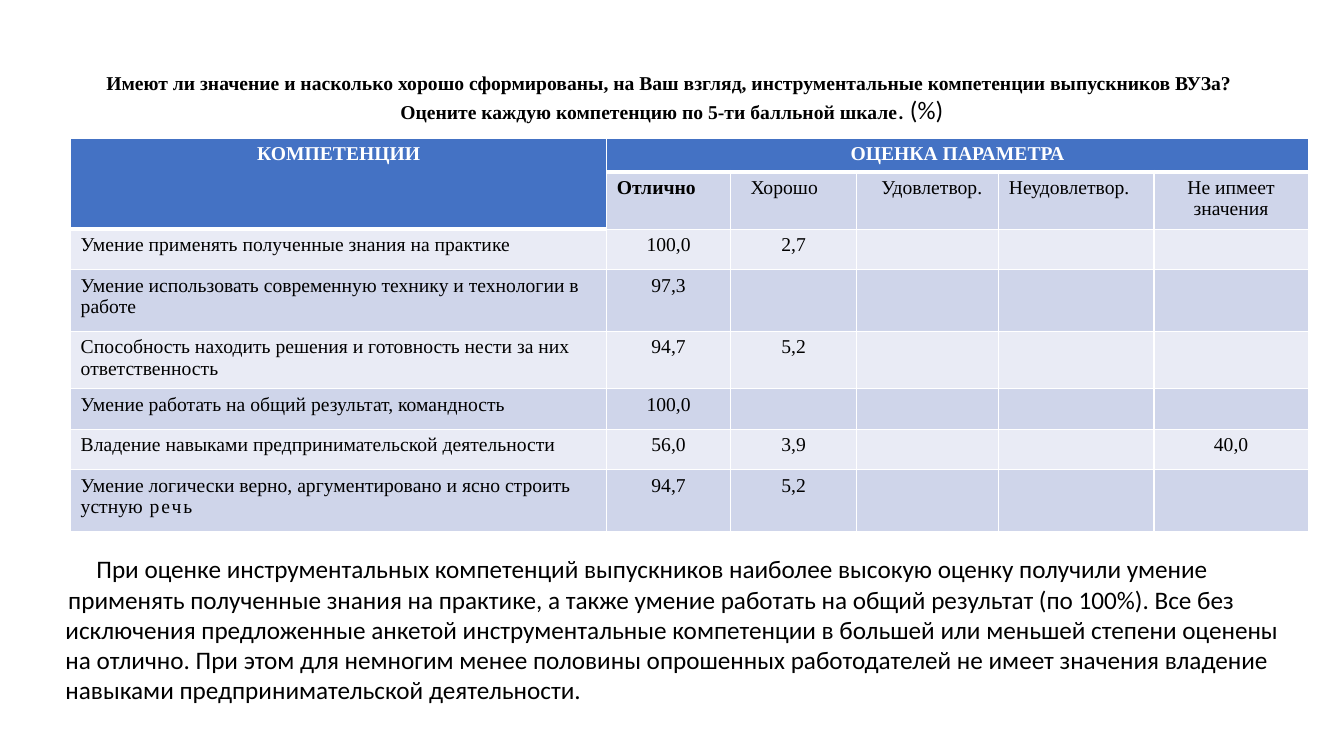
from lxml.etree import SubElement
from pptx import Presentation
from pptx.dml.color import RGBColor
from pptx.enum.text import PP_ALIGN
from pptx.oxml.ns import qn
from pptx.util import Cm, Pt

SERIF, SANS = "Times New Roman", "Calibri"
BLACK, WHITE, BLUE = "000000", "FFFFFF", "4472C4"
DARK_BAND, LIGHT_BAND = "CFD5EA", "E9EBF5"


def color(value):
    return RGBColor.from_string(value)


def add_span(para, text, size=14, font=SERIF, fill=BLACK, bold=False, spacing=0):
    span = para.add_run()
    span.text = text
    span.font.size, span.font.name, span.font.bold = Pt(size), font, bold
    span.font.color.rgb = color(fill)
    if spacing:
        span.font._element.set("spc", str(round(spacing * 100)))


def indent(para, left=0, first=0):
    properties = para._p.get_or_add_pPr()
    properties.set("marL", str(Cm(left)))
    properties.set("indent", str(Cm(first)))


class SlideBuilder:
    def __init__(self, deck):
        self.page = deck.slides.add_slide(deck.slide_layouts[6])

    def text_box(self, left, top, width, height):
        box = self.page.shapes.add_textbox(Cm(left), Cm(top), Cm(width), Cm(height))
        box.text_frame.word_wrap = True
        return box.text_frame

    def table(self, left, top, widths, heights):
        frame = self.page.shapes.add_table(
            len(heights), len(widths), Cm(left), Cm(top), Cm(sum(widths)), Cm(sum(heights)))
        table = frame.table
        table.first_row = table.horz_banding = False
        for column, width in zip(table.columns, widths):
            column.width = Cm(width)
        for row, height in zip(table.rows, heights):
            row.height = Cm(height)
        return table

    def cell_style(self, cell, fill, bottom=1):
        properties = cell._tc.get_or_add_tcPr()
        for side, width in (("L", 1), ("R", 1), ("T", 1), ("B", bottom)):
            line = SubElement(properties, qn(f"a:ln{side}"), w=str(Pt(width)))
            solid = SubElement(line, qn("a:solidFill"))
            SubElement(solid, qn("a:srgbClr"), val=WHITE)
        cell.fill.solid()
        cell.fill.fore_color.rgb = color(fill)

    def cell_text(self, cell, text, centered=False, left=0, **style):
        para = cell.text_frame.paragraphs[0]
        para.alignment = PP_ALIGN.CENTER if centered else PP_ALIGN.LEFT
        if left:
            indent(para, left)
        add_span(para, text, **style)
        return para


WIDTHS = [13.51, 3.12, 3.18, 3.58, 3.91, 3.89]
HEIGHTS = [0.84, 1.45, 1.02, 1.55, 1.45, 1.02, 1.02, 1.55]
GRADES = [
    ("Отлично", dict(bold=True)),
    ("Хорошо", dict(left=0.25)),
    ("Удовлетвор.", dict(left=0.37)),
    ("Неудовлетвор.", {}),
    ("Не ипмеет значения", dict(centered=True)),
]
SKILLS = [
    ("Умение применять полученные знания на практике", {1: "100,0", 2: "2,7"}),
    ("Умение использовать современную технику и технологии в работе", {1: "97,3"}),
    ("Способность находить решения и готовность нести за них ответственность",
     {1: "94,7", 2: "5,2"}),
    ("Умение работать на общий результат, командность", {1: "100,0"}),
    ("Владение навыками предпринимательской деятельности",
     {1: "56,0", 2: "3,9", 5: "40,0"}),
    ("Умение логически верно, аргументировано и ясно строить устную",
     {1: "94,7", 2: "5,2"}),
]


def main():
    deck = Presentation()
    deck.slide_width, deck.slide_height = Cm(33.87), Cm(19.05)
    builder = SlideBuilder(deck)

    # Question
    question = builder.text_box(0.89, 1.66, 32.08, 1.6)
    first, second = question.paragraphs[0], question.add_paragraph()
    first.alignment = second.alignment = PP_ALIGN.CENTER
    add_span(first, "Имеют ли значение и насколько хорошо сформированы, на Ваш взгляд, "
             "инструментальные компетенции выпускников ВУЗа? ", bold=True)
    add_span(second, "Оцените каждую компетенцию по 5-ти балльной шкале", bold=True)
    add_span(second, ". (%)", size=18, font=SANS)

    # Table fills and borders
    table = builder.table(1.78, 3.48, WIDTHS, HEIGHTS)
    for row in range(len(HEIGHTS)):
        for column in range(len(WIDTHS)):
            heading = row == 0 or (row == 1 and column == 0)
            band = DARK_BAND if row % 2 else LIGHT_BAND
            builder.cell_style(table.cell(row, column), BLUE if heading else band,
                               bottom=3 if heading else 1)

    # Table headings
    table.cell(0, 0).merge(table.cell(1, 0))
    table.cell(0, 1).merge(table.cell(0, 5))
    for column, title in enumerate(("КОМПЕТЕНЦИИ", "ОЦЕНКА ПАРАМЕТРА")):
        builder.cell_text(table.cell(0, column), title, centered=True, fill=WHITE, bold=True)
    for column, (grade, style) in enumerate(GRADES, 1):
        builder.cell_text(table.cell(1, column), grade, **style)

    # Table values
    for row, (skill, scores) in enumerate(SKILLS, 2):
        label = builder.cell_text(table.cell(row, 0), skill)
        for column, score in scores.items():
            builder.cell_text(table.cell(row, column), score, centered=True)
    add_span(label, " речь", spacing=1.4)

    # Conclusion
    conclusion = builder.text_box(0.89, 13.83, 32.08, 4.2)
    opening, rest = conclusion.paragraphs[0], conclusion.add_paragraph()
    indent(opening, first=1.29)
    indent(rest, left=0.51, first=0.07)
    add_span(opening, "При оценке инструментальных компетенций выпускников наиболее "
             "высокую оценку получили умение", size=18, font=SANS)
    add_span(rest, "применять полученные знания на практике, а также умение работать на "
             "общий результат (по 100%). Все без исключения предложенные анкетой "
             "инструментальные компетенции в большей или меньшей степени оценены на "
             "отлично. При этом для немногим менее половины опрошенных работодателей не "
             "имеет значения владение навыками предпринимательской деятельности.",
             size=18, font=SANS)

    deck.save("out.pptx")


if __name__ == "__main__":
    main()
